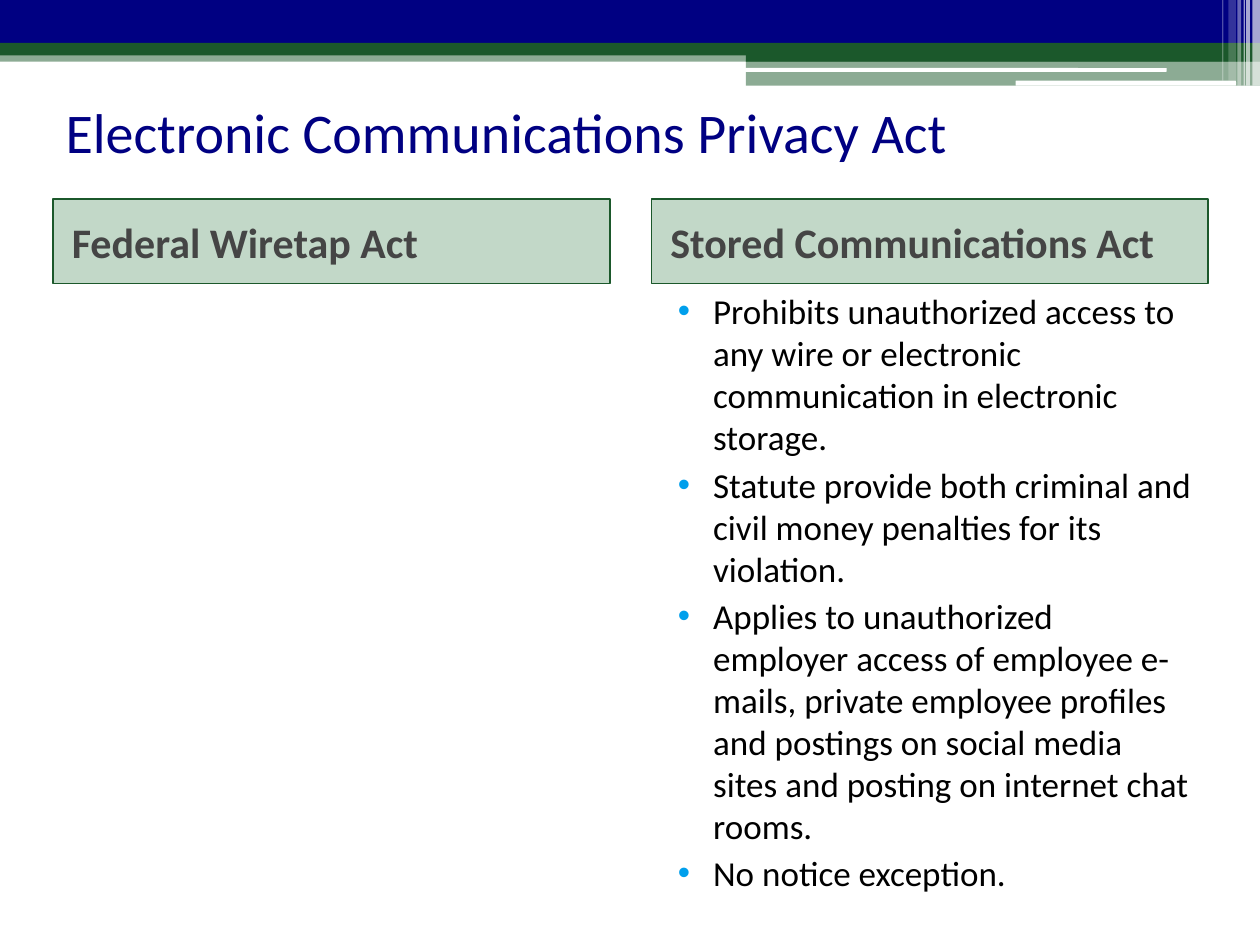
from lxml.etree import SubElement
from pptx import Presentation
from pptx.dml.color import RGBColor
from pptx.enum.shapes import MSO_SHAPE
from pptx.enum.text import MSO_ANCHOR, MSO_AUTO_SIZE, PP_ALIGN
from pptx.oxml.ns import qn
from pptx.util import Inches, Pt

NAVY, GREEN, WHITE = "000082", "1B582B", "FFFFFF"

BANDS = [
    (0, 0.4, 10, 0.09, GREEN, 50),
    (0, 0, 10, 0.34, NAVY, 100),
    (0, 0.34, 10, 0.1, GREEN, 100),
    (5.92, 0.39, 4.08, 0.1, GREEN, 100),
    (5.92, 0.48, 4.08, 0.2, GREEN, 50),
]
ROUNDED_BARS = [(5.91, 0.54, 3.35, 0.03), (8.06, 0.64, 1.75, 0.04)]
STRIPES = [
    (9.94, 0.06, 0.68, 65),
    (9.89, 0.03, 0.68, 65),
    (9.87, 0.01, 0.68, 60),
    (9.82, 0.03, 0.68, 40),
    (9.75, 0.06, 0.64, 20),
    (9.7, 0.01, 0.64, 30),
]
POINTS = [
    "Prohibits unauthorized access to any wire or electronic communication in electronic storage.",
    "Statute provide both criminal and civil money penalties for its violation.",
    "Applies to unauthorized employer access of employee e-mails, private employee profiles "
    "and postings on social media sites and posting on internet chat rooms.",
    "No notice exception.",
]


def color(value):
    return RGBColor.from_string(value)


class SlideBuilder:
    font = "Calibri"
    bullet_color = "009FEC"

    def __init__(self, page):
        self.page = page
        self.holders = {holder.placeholder_format.idx: holder for holder in page.placeholders}

    def fill(self, shape, value, opacity):
        shape.fill.solid()
        shape.fill.fore_color.rgb = color(value)
        if opacity < 100:
            tint = shape.fill._xPr.find(qn("a:solidFill"))[0]
            SubElement(tint, qn("a:alpha"), val=str(opacity * 1000))

    def bar(self, left, top, width, height, value, opacity=100, kind=MSO_SHAPE.RECTANGLE):
        shape = self.page.shapes.add_shape(
            kind, Inches(left), Inches(top), Inches(width), Inches(height))
        shape.shadow.inherit = False
        shape.line.fill.background()
        self.fill(shape, value, opacity)

    def text(self, index, left, top, width, height, lines, size, value,
             bold=False, anchor=MSO_ANCHOR.MIDDLE, before=0, indent=(0, 0)):
        box = self.holders[index]
        box.left, box.top = Inches(left), Inches(top)
        box.width, box.height = Inches(width), Inches(height)
        frame = box.text_frame
        frame.text = "\n".join(lines)
        frame.word_wrap = True
        frame.auto_size = MSO_AUTO_SIZE.NONE
        frame.vertical_anchor = anchor
        margin, first = indent
        for para in frame.paragraphs:
            para.alignment = PP_ALIGN.LEFT
            para.space_before = Pt(before)
            para.font.name = self.font
            para.font.size = Pt(size)
            para.font.bold = bold
            para.font.color.rgb = color(value)
            properties = para._p.get_or_add_pPr()
            properties.set("marL", str(Inches(margin)))
            properties.set("indent", str(Inches(first)))
        return box

    def title(self, words):
        self.text(0, 0.42, 0.75, 9.17, 0.58, [words], 32, NAVY)

    def heading(self, index, left, words):
        box = self.text(index, left, 1.58, 4.42, 0.67, [words], 24, "454545",
                        bold=True, before=3, indent=(0.05, 0))
        self.fill(box, "0C6724", 25)
        box.line.color.rgb = color(GREEN)
        box.line.width = Pt(1)

    def bullets(self, index, lines):
        box = self.text(index, 5.16, 2.25, 4.42, 4.96, lines, 20, "000000",
                        anchor=MSO_ANCHOR.TOP, before=3, indent=(0.4, -0.28))
        for para in box.text_frame.paragraphs:
            properties = para._p.get_or_add_pPr()
            default_run = properties.find(qn("a:defRPr"))
            tint = SubElement(properties, qn("a:buClr"))
            SubElement(tint, qn("a:srgbClr"), val=self.bullet_color)
            SubElement(properties, qn("a:buFont"), typeface="Arial")
            SubElement(properties, qn("a:buChar"), char="•")
            if default_run is not None:
                properties.append(default_run)

    def remove(self, index):
        element = self.holders[index]._element
        element.getparent().remove(element)


def main():
    deck = Presentation()
    deck.slide_width, deck.slide_height = Inches(10), Inches(7.5)
    builder = SlideBuilder(deck.slides.add_slide(deck.slide_layouts[4]))
    for band in BANDS:
        builder.bar(*band)
    for bar in ROUNDED_BARS:
        builder.bar(*bar, WHITE, kind=MSO_SHAPE.ROUNDED_RECTANGLE)
    for left, width, height, opacity in STRIPES:
        builder.bar(left, 0, width, height, WHITE, opacity)
    builder.title("Electronic Communications Privacy Act")
    builder.heading(1, 0.42, "Federal Wiretap Act")
    builder.heading(3, 5.17, "Stored Communications Act")
    builder.bullets(4, POINTS)
    builder.remove(2)
    deck.save("out.pptx")


if __name__ == "__main__":
    main()
